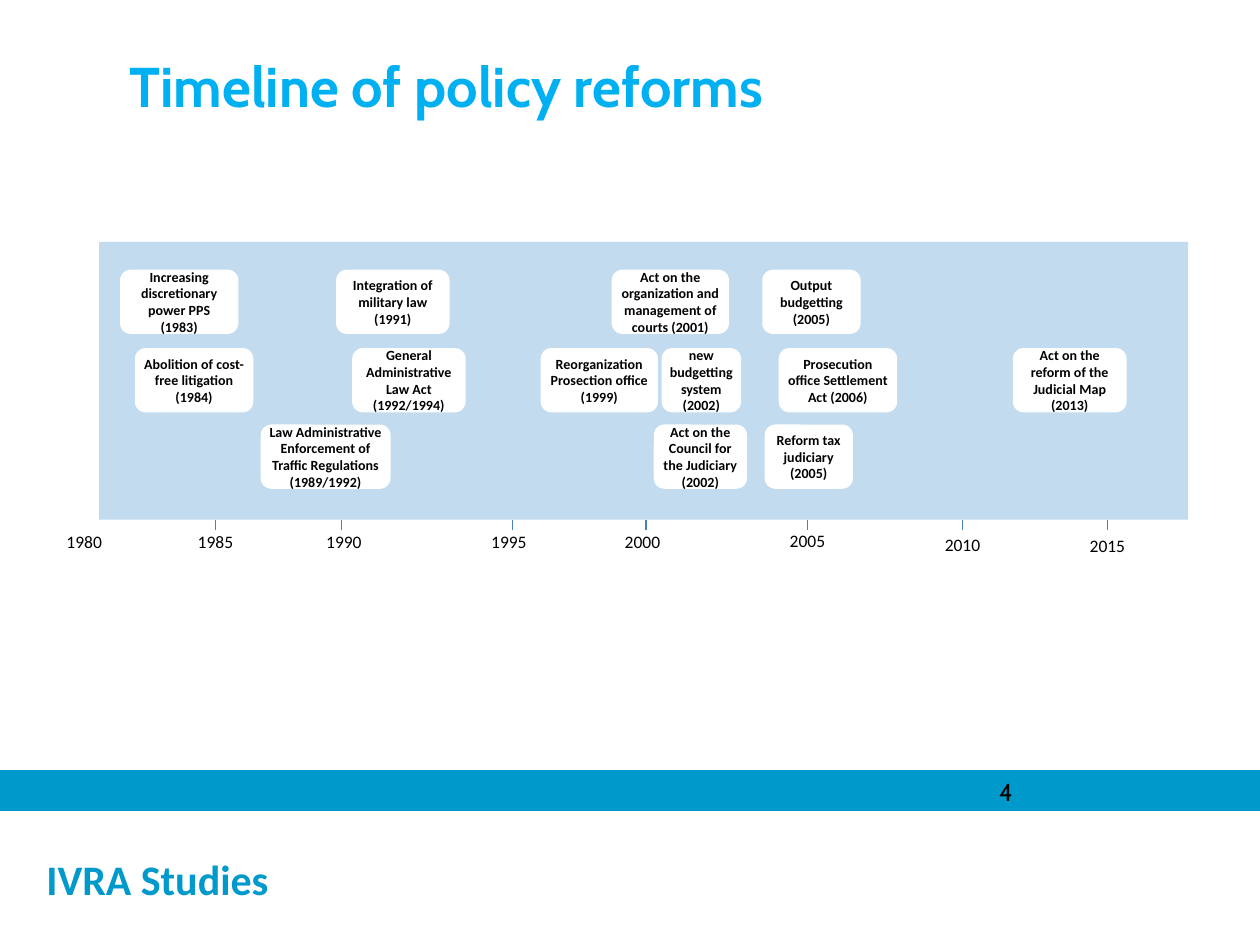
from collections import namedtuple
from dataclasses import dataclass

from lxml.etree import SubElement
from pptx import Presentation
from pptx.dml.color import RGBColor
from pptx.enum.shapes import MSO_CONNECTOR, MSO_SHAPE
from pptx.enum.text import MSO_ANCHOR, PP_ALIGN
from pptx.oxml.ns import qn
from pptx.util import Pt


@dataclass(frozen=True)
class Theme:
    """Colours, fonts and type sizes of the slide."""

    title: str = "00B0F0"
    brand: str = "0099CC"
    band: str = "C3DBEF"
    tick: str = "4B7EBC"
    text: str = "000000"
    paper: str = "FFFFFF"
    heading_font: str = "Cabin"
    body_font: str = "Calibri"
    title_size: float = 32
    footer_size: float = 24
    number_size: float = 14
    year_size: float = 10
    card_size: float = 8


THEME = Theme()
Box = namedtuple("Box", "left top width height")

TITLE_BOX = Box(31, 26, 634, 46)
BAND_BOX = Box(56.6, 138.2, 622.4, 158.8)
FOOTER_BOX = Box(0, 440.4, 720, 99.6)

CARD_HEIGHT = 36.7
CARD_ROWS = [
    (15.9, [
        (12, 67.6, "Increasing discretionary power PPS (1983)"),
        (135.5, 64.8, "Integration of military law (1991)"),
        (293, 67, "Act on the organization and management of courts (2001)"),
        (379, 56.2, "Output budgetting (2005)"),
    ]),
    (60.7, [
        (20.5, 67.7, "Abolition of cost-free litigation (1984)"),
        (144.7, 64.8, "General Administrative Law Act (1992/1994)"),
        (252.4, 67, "Reorganization Prosection office (1999)"),
        (321.5, 45.4, "new budgetting system (2002)"),
        (388.4, 67.7, "Prosecution office Settlement Act (2006)"),
        (522.2, 65, "Act on the reform of the Judicial Map (2013)"),
    ]),
    (104.4, [
        (92.4, 74.2, "Law Administrative Enforcement of Traffic Regulations (1989/1992)"),
        (317, 53.3, "Act on the Council for the Judiciary (2002)"),
        (380.4, 50.4, "Reform tax judiciary (2005)"),
    ]),
]

YEAR_START, YEAR_STEP = 1980, 5
YEAR_MARKS = [
    (None, -25.7, 3.2),
    (66.5, 49.3, 3.2),
    (138.5, 122.7, 3.2),
    (236.4, 217, 3.2),
    (312.6, 293.3, 3.2),
    (405, 387.6, 2.5),
    (493.5, 476.2, 4.7),
    (576.3, 559, 5.4),
]


def colour(value):
    """Turn a hex string into a colour."""
    return RGBColor.from_string(value)


def write(shape, text, *, size, font=THEME.body_font, color=THEME.text, bold=False,
          align=PP_ALIGN.LEFT, anchor=MSO_ANCHOR.TOP, margins=(7.2, 3.6, 7.2, 3.6), wrap=True):
    """Write one formatted paragraph into a shape."""
    frame = shape.text_frame
    frame.word_wrap = wrap
    frame.vertical_anchor = anchor
    (frame.margin_left, frame.margin_top,
     frame.margin_right, frame.margin_bottom) = map(Pt, margins)
    paragraph = frame.paragraphs[0]
    paragraph.alignment = align
    run = paragraph.add_run()
    run.text = text
    run.font.name = font
    run.font.size = Pt(size)
    run.font.bold = bold
    run.font.color.rgb = colour(color)


def add_text(slide, box, text, **style):
    """Add a text box."""
    write(slide.shapes.add_textbox(*map(Pt, box)), text, **style)


def add_block(slide, box, fill, kind=MSO_SHAPE.RECTANGLE):
    """Add a filled shape without outline or shadow."""
    shape = slide.shapes.add_shape(kind, *map(Pt, box))
    shape.shadow.inherit = False
    shape.fill.solid()
    shape.fill.fore_color.rgb = colour(fill)
    shape.line.fill.background()
    return shape


def add_tick(slide, x, top, length):
    """Add a vertical axis tick."""
    tick = slide.shapes.add_connector(
        MSO_CONNECTOR.STRAIGHT, Pt(x), Pt(top), Pt(x), Pt(top + length))
    tick.line.color.rgb = colour(THEME.tick)
    tick.line.width = Pt(0.75)
    SubElement(tick.element.spPr, qn("a:effectLst"))


def add_title(slide, box):
    """Place the indented slide title."""
    add_text(slide, box, "Timeline of policy reforms", size=THEME.title_size,
             font=THEME.heading_font, color=THEME.title, bold=True,
             margins=(43.2, 3.6, 7.2, 3.6))


def add_cards(slide, box):
    """Place the band and its rows of reform cards."""
    add_block(slide, box, THEME.band)
    for top, cards in CARD_ROWS:
        for left, width, text in cards:
            card_box = Box(box.left + left, box.top + top, width, CARD_HEIGHT)
            card = add_block(slide, card_box, THEME.paper, MSO_SHAPE.ROUNDED_RECTANGLE)
            write(card, text, size=THEME.card_size, bold=True, align=PP_ALIGN.CENTER,
                  anchor=MSO_ANCHOR.MIDDLE, margins=(2.9,) * 4)


def add_axis(slide, box):
    """Place the ticks and years along the lower edge of the band."""
    bottom = box.top + box.height
    for index, (tick, left, drop) in enumerate(YEAR_MARKS):
        if tick is not None:
            add_tick(slide, box.left + tick, bottom, 6)
        label_box = Box(box.left + left, bottom + drop, 35.3, 19.4)
        add_text(slide, label_box, str(YEAR_START + index * YEAR_STEP),
                 size=THEME.year_size, wrap=False)


def add_footer(slide, box):
    """Place the coloured bar, the page number and the institute name."""
    bar = add_block(slide, box._replace(height=22.6), THEME.brand)
    bar.line.color.rgb = colour(THEME.brand)
    bar.line.width = Pt(0.75)
    add_text(slide, Box(box.left + 563.8, box.top, 149.8, 18), "4",
             size=THEME.number_size, font=THEME.heading_font)
    name = add_block(slide, Box(box.left, box.top + 23.4, box.width, box.height - 23.4),
                     THEME.paper)
    write(name, "IVRA Studies", size=THEME.footer_size, color=THEME.brand, bold=True,
          anchor=MSO_ANCHOR.MIDDLE, margins=(26.5, 3.6, 7.2, 3.6))


def main():
    """Build and save the timeline slide."""
    presentation = Presentation()
    presentation.slide_width, presentation.slide_height = Pt(720), Pt(540)
    slide = presentation.slides.add_slide(presentation.slide_layouts[6])
    add_footer(slide, FOOTER_BOX)
    add_title(slide, TITLE_BOX)
    add_cards(slide, BAND_BOX)
    add_axis(slide, BAND_BOX)
    presentation.save("out.pptx")


if __name__ == "__main__":
    main()
